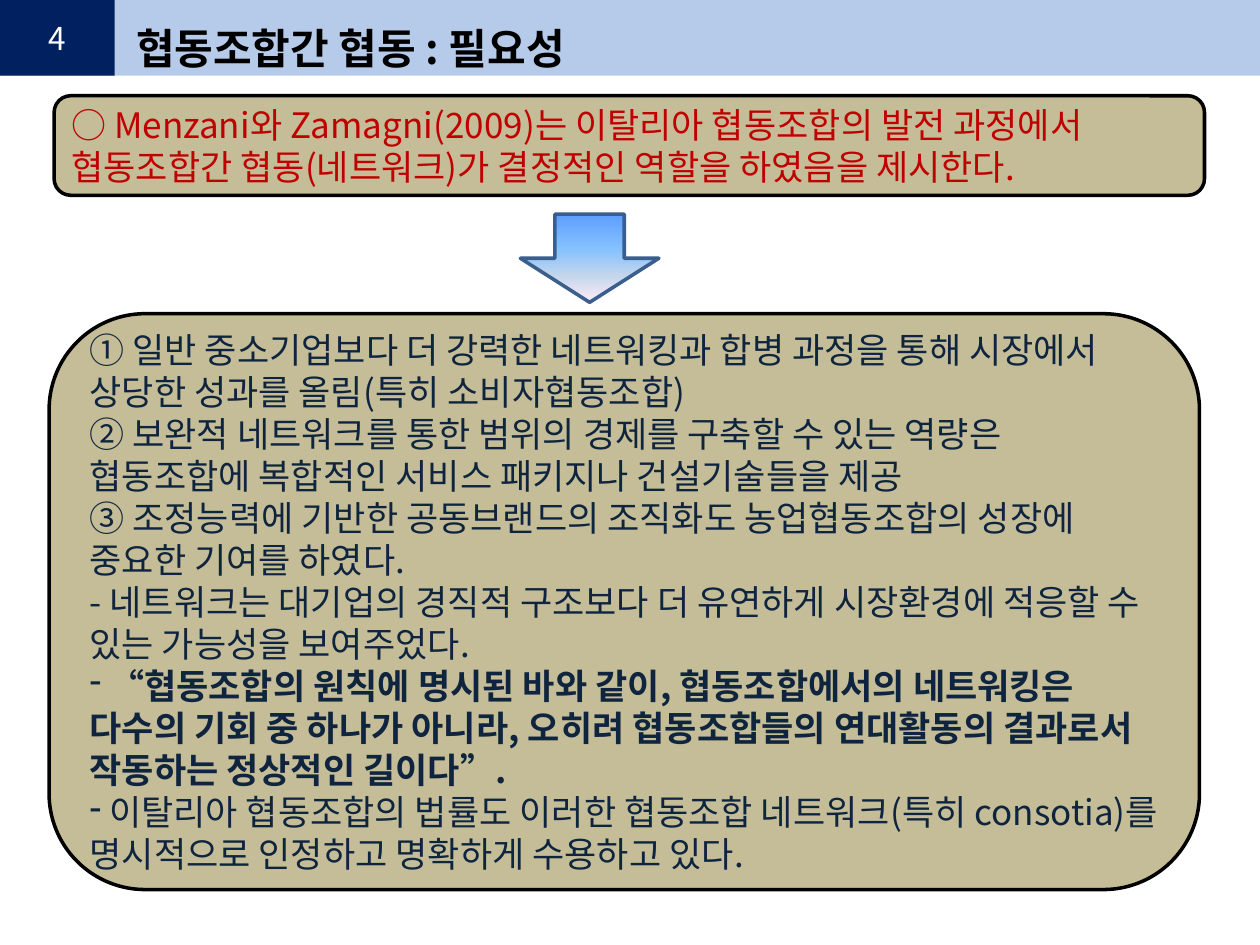
from pptx import Presentation
from pptx.util import Inches, Pt
from pptx.dml.color import RGBColor
from pptx.enum.shapes import MSO_SHAPE
from pptx.enum.text import PP_ALIGN, MSO_ANCHOR
from pptx.oxml.ns import qn
from lxml.etree import SubElement

FONT = "Noto Sans CJK KR"
HEX = {"band": "B6CAEA", "navy": "002060", "white": "FFFFFF", "black": "000000",
       "tan": "C4BD97", "red": "C00000", "ink": "0F243E", "edge": "3A5F8C"}
STOPS = [(0, "5E9EFF"), (40, "85C2FF"), (70, "C4D6EB"), (100, "FFEBFA")]

CLAIM = ["○ Menzani와 Zamagni(2009)는 이탈리아 협동조합의 발전 과정에서 협동조합간 협동(네트워크)가 결정적인 역할을 하였음을 제시한다."]
POINTS = [
    "① 일반 중소기업보다 더 강력한 네트워킹과 합병 과정을 통해 시장에서 상당한 성과를 올림(특히 소비자협동조합)",
    "② 보완적 네트워크를 통한 범위의 경제를 구축할 수 있는 역량은 협동조합에 복합적인 서비스 패키지나 건설기술들을 제공",
    "③ 조정능력에 기반한 공동브랜드의 조직화도 농업협동조합의 성장에 중요한 기여를 하였다.",
    "- 네트워크는 대기업의 경직적 구조보다 더 유연하게 시장환경에 적응할 수 있는 가능성을 보여주었다.",
    " “협동조합의 원칙에 명시된 바와 같이, 협동조합에서의 네트워킹은 다수의 기회 중 하나가 아니라, 오히려 협동조합들의 연대활동의 결과로서 작동하는 정상적인 길이다”.",
    " 이탈리아 협동조합의 법률도 이러한 협동조합 네트워크(특히 consotia)를 명시적으로 인정하고 명확하게 수용하고 있다.",
]


def color(name):
    return RGBColor.from_string(HEX[name])


def add_box(slide, kind, box, fill=None, line=None):
    shape = slide.shapes.add_shape(kind, *map(Inches, box))
    shape.shadow.inherit = False
    if fill:
        shape.fill.solid()
        shape.fill.fore_color.rgb = color(fill)
    if line:
        shape.line.color.rgb = color(line)
        shape.line.width = Pt(2)
    else:
        shape.line.fill.background()
    return shape


def write(shape, lines, size, ink, align=PP_ALIGN.LEFT, bold=False):
    frame = shape.text_frame
    frame.word_wrap = True
    frame.vertical_anchor = MSO_ANCHOR.MIDDLE
    frame.text = "\n".join(lines)
    for para in frame.paragraphs:
        para.alignment = align
        para.line_spacing = Pt(size * 1.2)
        para.space_before = Pt(0)
        for run in para.runs:
            font = run.font
            font.size, font.bold, font.name = Pt(size), bold, FONT
            font.color.rgb = color(ink)
            SubElement(font._element, qn("a:ea"), typeface=FONT)


def add_dash(para):
    props = para._p.get_or_add_pPr()
    props.set("marL", "0")
    props.set("indent", "0")
    SubElement(props, qn("a:buFontTx"))
    SubElement(props, qn("a:buChar"), char="-")


def add_header(slide, box, number, text):
    left, top, width, height = box
    tab = 0.91
    add_box(slide, MSO_SHAPE.RECTANGLE, box, "band")
    badge = add_box(slide, MSO_SHAPE.RECTANGLE, (left, top, tab, height), "navy")
    write(badge, [number], 18, "white", PP_ALIGN.CENTER)
    title = slide.shapes.title
    title.left, title.top = Inches(left + 0.98), Inches(top + 0.13)
    title.width, title.height = Inches(7.01), Inches(0.5)
    write(title, [text], 24, "black", bold=True)
    slide.shapes.element.append(title.element)


def add_panel(slide, box, lines, ink):
    panel = add_box(slide, MSO_SHAPE.ROUNDED_RECTANGLE, box, "tan", "black")
    write(panel, lines, 20, ink)
    return panel.text_frame.paragraphs


def add_points(slide, box):
    paras = add_panel(slide, box, POINTS, "ink")
    quote, law = paras[-2:]
    quote.runs[0].font.bold = True
    add_dash(quote)
    add_dash(law)


def add_arrow(slide, box):
    arrow = add_box(slide, MSO_SHAPE.DOWN_ARROW, box, line="edge")
    arrow.fill.gradient()
    arrow.fill.gradient_angle = 270
    stops = arrow.element.spPr.find(qn("a:gradFill")).find(qn("a:gsLst"))
    for old in list(stops):
        stops.remove(old)
    for share, shade in STOPS:
        stop = SubElement(stops, qn("a:gs"), pos=str(share * 1000))
        SubElement(stop, qn("a:srgbClr"), val=shade)


def main():
    deck = Presentation()
    deck.slide_width, deck.slide_height = Inches(10), Inches(7.5)
    slide = deck.slides.add_slide(deck.slide_layouts[5])
    add_header(slide, (0, 0, 10, 0.6), "4", "협동조합간 협동 : 필요성")
    add_panel(slide, (0.43, 0.76, 9.13, 0.79), CLAIM, "red")
    add_points(slide, (0.39, 2.49, 9.13, 4.57))
    add_arrow(slide, (4.13, 1.7, 1.1, 0.7))
    deck.save("out.pptx")


if __name__ == "__main__":
    main()
